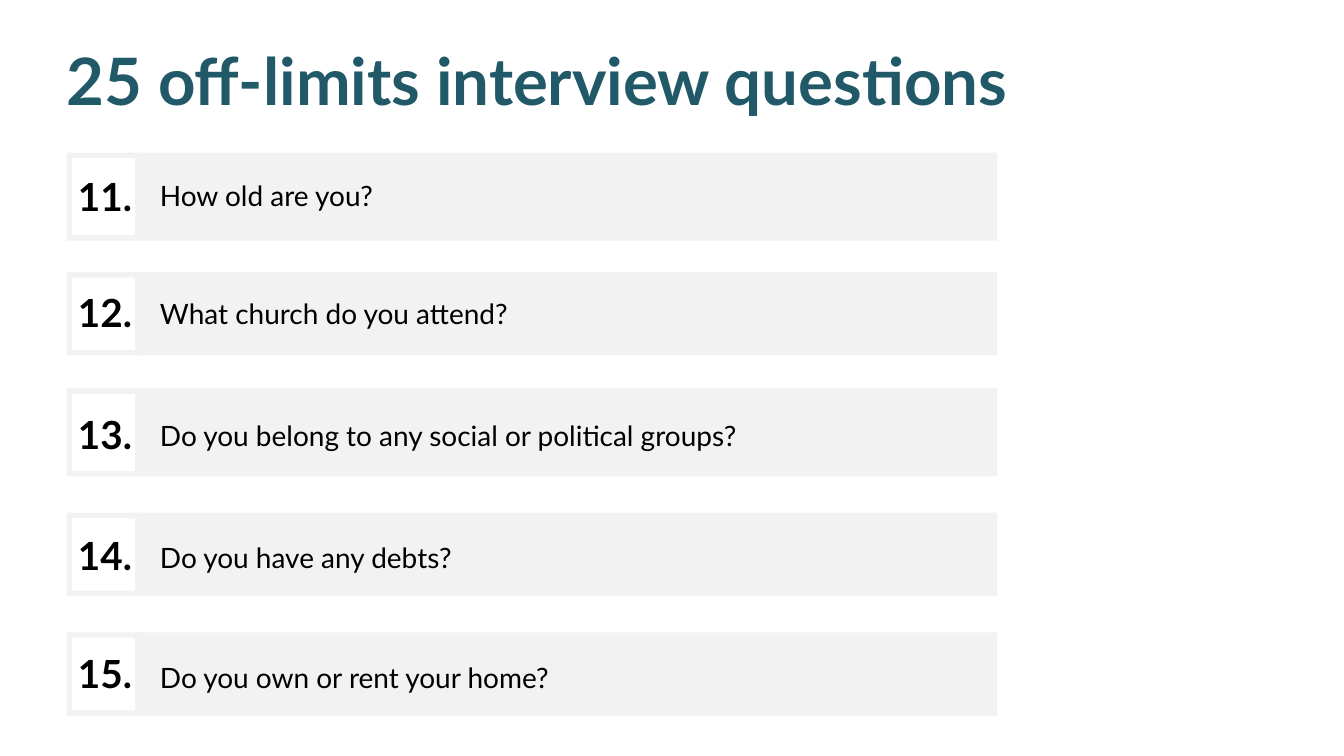
from pptx import Presentation
from pptx.dml.color import RGBColor
from pptx.enum.shapes import MSO_SHAPE
from pptx.enum.text import MSO_ANCHOR, MSO_AUTO_SIZE, PP_ALIGN
from pptx.util import Inches, Pt

COLORS = {"title": "215968", "text": "000000", "bar": "F2F2F2"}
FONT = "Lato"
LEFT, WIDTH = 0.99, 13.85
FRAME, RIM = 1.1, 0.08

# number, question, row top, row height, number offset, question offset
ROWS = [
    ("11.", "How old are you?", 2.27, 1.31, 0.33, 0.30),
    ("12.", "What church do you attend?", 4.05, 1.24, 0.28, 0.28),
    ("13.", "Do you belong to any social or political groups?", 5.78, 1.31, 0.36, 0.36),
    ("14.", "Do you have any debts?", 7.63, 1.24, 0.31, 0.33),
    ("15.", "Do you own or rent your home?", 9.41, 1.24, 0.29, 0.34),
]


def paint(shape):
    """Give a shape the flat bar colour without line or shadow."""
    shape.shadow.inherit = False
    shape.fill.solid()
    shape.fill.fore_color.rgb = RGBColor.from_string(COLORS["bar"])
    shape.line.fill.background()


def write(shape, text, size, lead, color="text", bold=False):
    """Fill a text shape with one left-aligned line."""
    frame = shape.text_frame
    frame.margin_left = frame.margin_right = 0
    frame.margin_top = frame.margin_bottom = 0
    frame.word_wrap = True
    frame.auto_size = MSO_AUTO_SIZE.NONE
    frame.vertical_anchor = MSO_ANCHOR.TOP
    frame.text = text
    para = frame.paragraphs[0]
    para.alignment = PP_ALIGN.LEFT
    para.line_spacing = Pt(lead)
    para.font.name = FONT
    para.font.size = Pt(size)
    para.font.bold = bold
    para.font.color.rgb = RGBColor.from_string(COLORS[color])


def add_title(slide, text, left, top, width, height):
    """Place and format the slide title."""
    title = slide.shapes.title
    title.left, title.top = Inches(left), Inches(top)
    title.width, title.height = Inches(width), Inches(height)
    write(title, text, 70, 79.8, "title", True)


def add_frame(slide, left, top, width, height):
    """Draw a thin rectangular frame with an open middle."""
    x, y = Inches(left), Inches(top)
    right, base = Inches(left + width), Inches(top + height)
    rim = Inches(RIM)
    form = slide.shapes.build_freeform(x, y)
    form.add_line_segments([(x, base), (right, base), (right, y)])
    form.move_to(right - rim, base - rim)
    form.add_line_segments(
        [(x + rim, base - rim), (x + rim, y + rim), (right - rim, y + rim)]
    )
    paint(form.convert_to_shape())


def add_row(slide, left, top, width, height, number, text, drop, dip):
    """Draw one question bar with its framed number."""
    inset = FRAME - 0.03
    bar = slide.shapes.add_shape(
        MSO_SHAPE.RECTANGLE, Inches(left + inset), Inches(top),
        Inches(width - inset), Inches(height))
    paint(bar)
    add_frame(slide, left, top, FRAME, height)
    label = slide.shapes.add_textbox(
        Inches(left + 0.17), Inches(top + drop), Inches(0.92), Inches(0.66))
    write(label, number, 41.5, 47.4, bold=True)
    body = slide.shapes.add_textbox(
        Inches(left + 1.39), Inches(top + dip), Inches(12.11), Inches(0.55))
    write(body, text, 30, 42)


def main():
    """Build and save the slide."""
    deck = Presentation()
    deck.slide_width, deck.slide_height = Inches(20), Inches(11.25)
    slide = deck.slides.add_slide(deck.slide_layouts[5])
    add_title(slide, "25 off-limits interview questions", LEFT, 0.65, 16.56, 1.12)
    for number, text, top, height, drop, dip in ROWS:
        add_row(slide, LEFT, top, WIDTH, height, number, text, drop, dip)
    deck.save("out.pptx")


if __name__ == "__main__":
    main()
